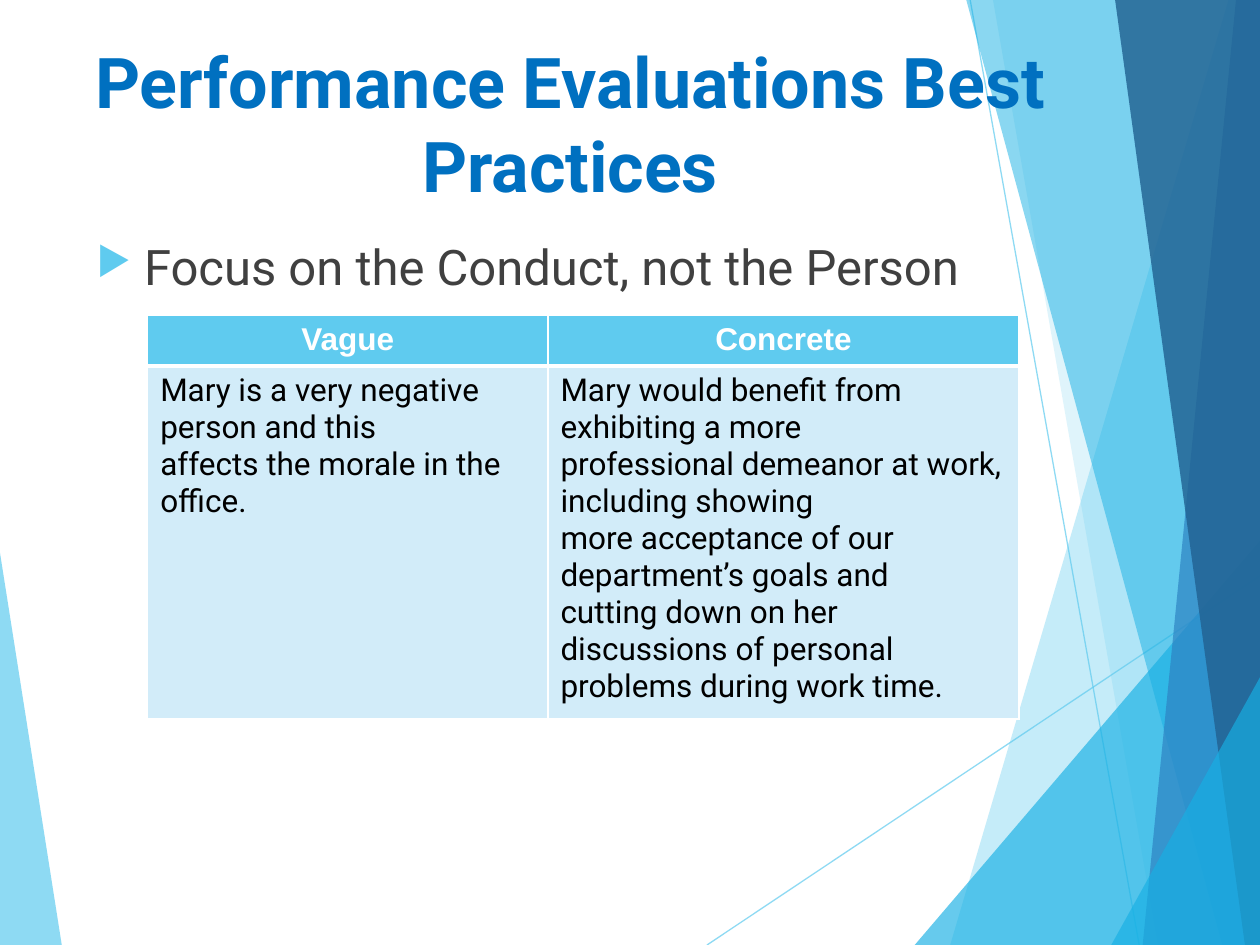
from lxml import etree
from pptx import Presentation
from pptx import util as u
from pptx.dml.color import RGBColor
from pptx.enum import shapes, text
from pptx.oxml import ns

SKY = RGBColor(0x5F, 0xCB, 0xEF)
CYAN = RGBColor(0x17, 0xB0, 0xE4)
BLUE = RGBColor(0x2E, 0x83, 0xC3)
NAVY = RGBColor(0x22, 0x62, 0x92)
TITLE_BLUE = RGBColor(0x00, 0x70, 0xC0)
PALE = RGBColor(0xD2, 0xEC, 0xF9)
GRAY = RGBColor(0x40, 0x40, 0x40)
WHITE = RGBColor(0xFF, 0xFF, 0xFF)
BLACK = RGBColor(0, 0, 0)
WIDTH, HEIGHT = 720, 540


def add_xml(parent, tag, **attributes):
    return etree.SubElement(parent, ns.qn(tag), attributes)


def set_opacity(element, percent):
    color = next(element.iter(ns.qn("a:srgbClr")))
    add_xml(color, "a:alpha", val=str(percent * 1000))


def write(para, words, size=18, font="Roboto", color=BLACK, bold=False, align=None):
    para.alignment = align
    span = para.add_run()
    span.text = words
    span.font.size = u.Pt(size)
    span.font.name = font
    span.font.bold = bold
    span.font.color.rgb = color


class Page:
    def __init__(self, deck):
        self.slide = deck.slides.add_slide(deck.slide_layouts[5])
        self.shapes = self.slide.shapes

    def facet(self, start, end, side, color, opacity):
        """Fill the area between a slanted edge and one side of the slide."""
        corners = [end, (side, end[1]), (side, start[1])]
        builder = self.shapes.build_freeform(u.Pt(start[0]), u.Pt(start[1]))
        builder.add_line_segments([(u.Pt(x), u.Pt(y)) for x, y in corners])
        shape = builder.convert_to_shape()
        shape.shadow.inherit = False
        shape.line.fill.background()
        shape.fill.solid()
        shape.fill.fore_color.rgb = color
        set_opacity(shape._element.spPr, opacity)

    def line(self, start, end, color, opacity):
        points = [u.Pt(value) for value in (*start, *end)]
        line = self.shapes.add_connector(shapes.MSO_CONNECTOR.STRAIGHT, *points)
        line.line.color.rgb = color
        line.line.width = u.Pt(0.75)
        set_opacity(line._element.spPr, opacity)
        add_xml(line._element.spPr, "a:effectLst")

    def title(self, words, left, top, width, height):
        box = self.shapes.title
        box.left, box.top, box.width, box.height = map(u.Pt, (left, top, width, height))
        frame = box.text_frame
        frame.word_wrap = True
        frame.auto_size = text.MSO_AUTO_SIZE.NONE
        frame.vertical_anchor = text.MSO_ANCHOR.MIDDLE
        write(frame.paragraphs[0], words, size=40, color=TITLE_BLUE, bold=True,
              align=text.PP_ALIGN.CENTER)
        self.shapes._spTree.append(box._element)  # in front of the facets

    def bullet(self, words, left, top, width, height):
        box = self.shapes.add_textbox(*map(u.Pt, (left, top, width, height)))
        box.text_frame.word_wrap = True
        para = box.text_frame.paragraphs[0]
        para.space_before = u.Pt(10)
        write(para, words, size=28, color=GRAY)
        props = para._p.get_or_add_pPr()
        props.set("marL", str(u.Pt(27)))
        props.set("indent", str(u.Pt(-27)))
        add_xml(add_xml(props, "a:buClr"), "a:srgbClr", val=str(SKY))
        add_xml(props, "a:buSzPct", val="80000")
        add_xml(props, "a:buChar", char="▶")

    def cell(self, cell, lines, fill, borders, **style):
        props = cell._tc.get_or_add_tcPr()
        for side, width in zip("LRTB", borders):
            edge = add_xml(props, f"a:ln{side}", w=str(u.Pt(width)))
            add_xml(add_xml(edge, "a:solidFill"), "a:srgbClr", val=str(WHITE))
        cell.fill.solid()
        cell.fill.fore_color.rgb = fill
        frame = cell.text_frame
        for index, words in enumerate(lines):
            para = frame.add_paragraph() if index else frame.paragraphs[0]
            write(para, words, **style)

    def table(self, columns, left, top, widths, heights):
        frame = self.shapes.add_table(2, len(columns), u.Pt(left), u.Pt(top),
                                      u.Pt(sum(widths)), u.Pt(sum(heights)))
        table = frame.table
        table.horz_banding = False
        for row, height in zip(table.rows, heights):
            row.height = u.Pt(height)
        for index, (heading, lines) in enumerate(columns):
            table.columns[index].width = u.Pt(widths[index])
            self.cell(table.cell(0, index), [heading], SKY, (1, 1, 1, 3), font="Arial",
                      color=WHITE, bold=True, align=text.PP_ALIGN.CENTER)
            self.cell(table.cell(1, index), lines, PALE, (1, 1, 3, 1))


def main():
    deck = Presentation()
    deck.slide_width, deck.slide_height = u.Pt(WIDTH), u.Pt(HEIGHT)
    page = Page(deck)

    # Faceted background
    page.facet((0, 316), (35.3, HEIGHT), 0, SKY, 70)
    page.line((404, HEIGHT), (WIDTH, 329), SKY, 70)
    page.line((554.4, 0), (651, HEIGHT), SKY, 70)
    for start, end, color, opacity in [
        ((702, 0), (543, HEIGHT), SKY, 36),
        ((567.4, 0), (661.7, HEIGHT), SKY, 20),
        ((522.7, HEIGHT), (WIDTH, 309), CYAN, 66),
        ((552.2, 0), (698.4, HEIGHT), CYAN, 50),
        ((706.3, 0), (653, HEIGHT), BLUE, 70),
        ((637.2, 0), (711.4, HEIGHT), NAVY, 82),
        ((635, HEIGHT), (WIDTH, 387), CYAN, 66),
    ]:
        page.facet(start, end, WIDTH, color, opacity)

    # Title and key point
    page.title("Performance Evaluations Best Practices", 46.8, 18, 558, 103.7)
    page.bullet("Focus on the Conduct, not the Person", 48.2, 131.8, 534.2, 365.8)

    # Comparison of wordings
    page.table([
        ("Vague", ["Mary is a very negative person and this",
                   "affects the morale in the office."]),
        ("Concrete", ["Mary would benefit from exhibiting a more",
                      "professional demeanor at work, including showing",
                      "more acceptance of our department’s goals and",
                      "cutting down on her discussions of personal",
                      "problems during work time."]),
    ], left=84.4, top=180.3, widths=(228.7, 269.3), heights=(28, 197))

    deck.save("out.pptx")


if __name__ == "__main__":
    main()
